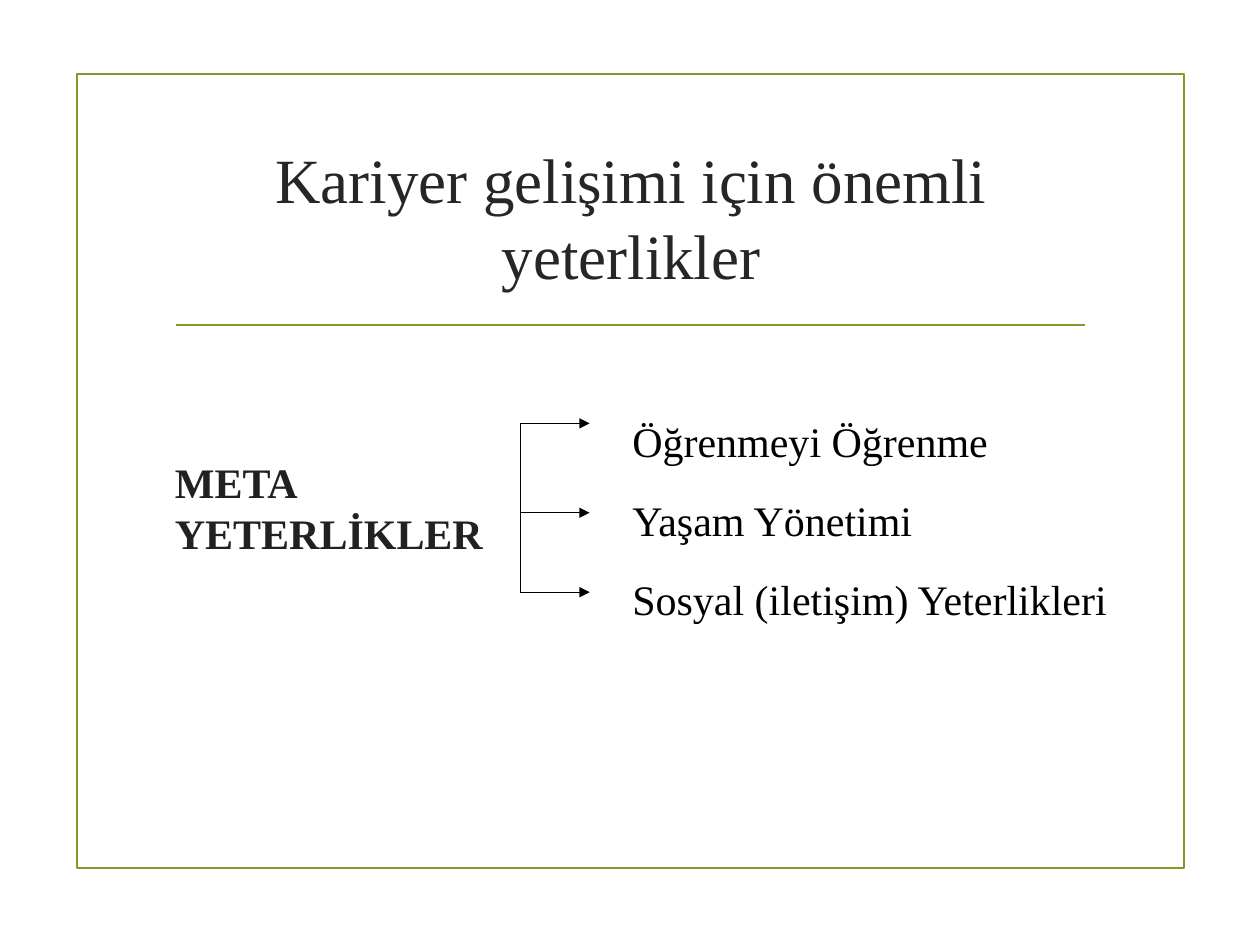
import pptx
import pptx.dml.color
import pptx.enum.shapes
import pptx.enum.text
import pptx.oxml
import pptx.util
from pptx.util import Inches

GREEN, BLACK = "83992A", "000000"


def color(value):
    return pptx.dml.color.RGBColor.from_string(value)


def add_text(p, text, size=24, fill=BLACK, bold=False, font="Times New Roman"):
    r = p.add_run()
    r.text = text
    r.font.name = font
    r.font.size = pptx.util.Pt(size)
    r.font.bold = bold
    r.font.color.rgb = color(fill)


class SlideBuilder:
    """Draws styled elements on the current slide."""

    def __init__(self, slide):
        self.s = slide

    def frame(self, x, y, w, h):
        sp = self.s.shapes.add_shape(
            pptx.enum.shapes.MSO_SHAPE.RECTANGLE, Inches(x), Inches(y), Inches(w), Inches(h))
        sp.shadow.inherit = False
        sp.fill.background()
        sp.line.color.rgb = color(GREEN)
        sp.line.width = pptx.util.Pt(1.25)

    def line(self, x1, y1, x2, y2, stroke=BLACK, width=0.75, arrow=False):
        sp = self.s.shapes.add_connector(
            pptx.enum.shapes.MSO_CONNECTOR.STRAIGHT,
            Inches(x1), Inches(y1), Inches(x2), Inches(y2))
        sp.line.color.rgb = color(stroke)
        sp.line.width = pptx.util.Pt(width)
        if arrow:
            ln = sp.line._get_or_add_ln()
            ln.append(ln.makeelement(pptx.oxml.ns.qn("a:tailEnd"), {"type": "triangle"}))
        props = sp._element.spPr
        props.append(props.makeelement(pptx.oxml.ns.qn("a:effectLst"), {}))

    def text(self, x, y, w, h, lines, anchor="MIDDLE", align="LEFT",
             spacing=None, before=0, **style):
        sp = self.s.shapes.add_textbox(Inches(x), Inches(y), Inches(w), Inches(h))
        tf = sp.text_frame
        tf.word_wrap = True
        tf.vertical_anchor = pptx.enum.text.MSO_ANCHOR[anchor]
        for i, text in enumerate(lines):
            p = tf.add_paragraph() if i else tf.paragraphs[0]
            p.alignment = pptx.enum.text.PP_ALIGN[align]
            if spacing:
                p.line_spacing = spacing
            if i:
                p.space_before = pptx.util.Pt(before)
            add_text(p, text, **style)


def main():
    prs = pptx.Presentation()
    prs.slide_width, prs.slide_height = Inches(10), Inches(7.5)
    b = SlideBuilder(prs.slides.add_slide(prs.slide_layouts[6]))

    b.frame(0.61, 0.59, 8.79, 6.3)
    b.line(1.4, 2.58, 8.61, 2.58, stroke=GREEN, width=1.25)
    b.text(1.29, 1, 7.44, 1.43, ["Kariyer gelişimi için önemli yeterlikler"],
           align="CENTER", size=36, fill="262626")
    b.text(1.29, 3.59, 2.93, 0.87, ["META YETERLİKLER"], fill="212121", bold=True)

    branches = [3.36, 4.07, 4.7]
    b.line(4.13, branches[0], 4.13, branches[-1])
    for y in branches:
        b.line(4.13, y, 4.68, y, arrow=True)
    b.text(4.92, 3.09, 4.84, 2.05,
           ["Öğrenmeyi Öğrenme", "Yaşam Yönetimi", "Sosyal (iletişim) Yeterlikleri"],
           anchor="TOP", spacing=1.4, before=4.8)

    prs.save("out.pptx")


if __name__ == "__main__":
    main()
